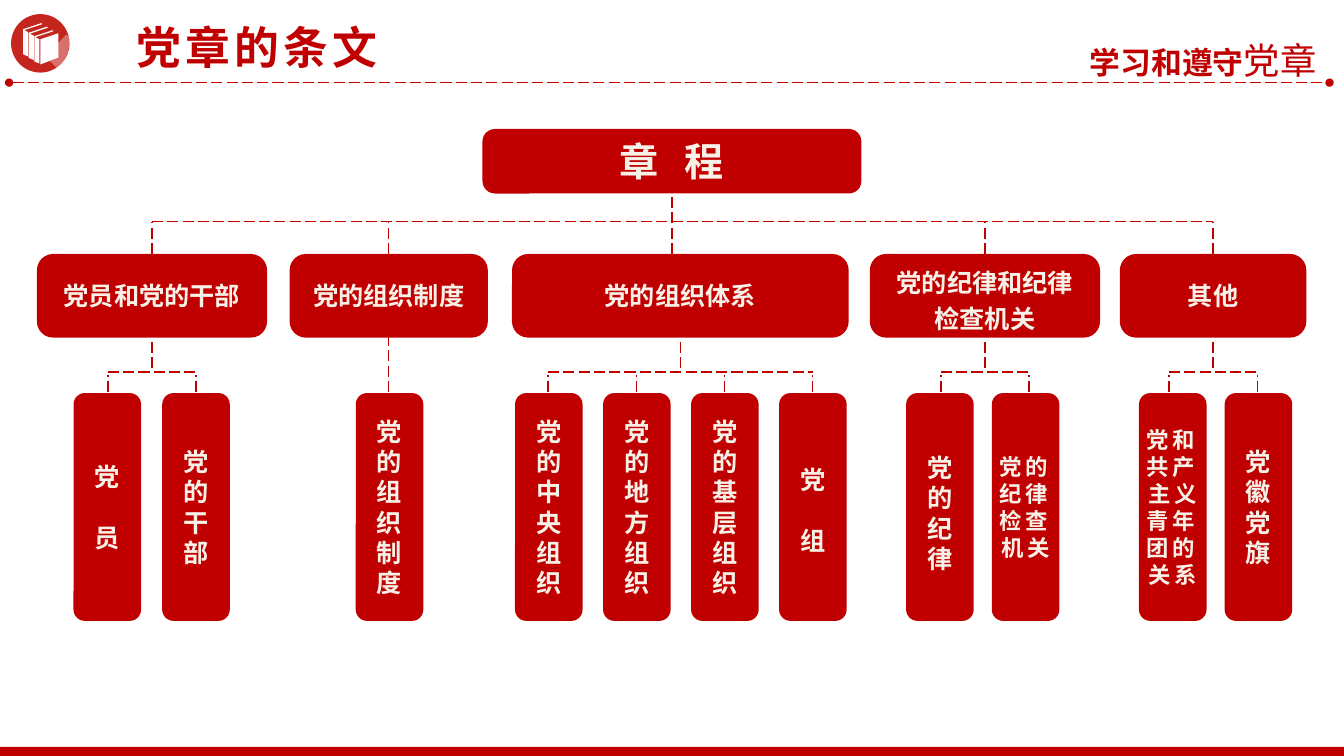
from dataclasses import dataclass

from lxml import etree
from pptx import Presentation
from pptx.dml.color import RGBColor
from pptx.enum.dml import MSO_LINE
from pptx.enum.shapes import MSO_CONNECTOR, MSO_SHAPE
from pptx.enum.text import MSO_ANCHOR, MSO_AUTO_SIZE, PP_ALIGN
from pptx.oxml.ns import qn
from pptx.util import Emu, Pt

COLUMNS, ROWS = 80, 45
CELL = 152400
RED, CREAM, WHITE, ICON_RED = "C00000", "F8F1E7", "FFFFFF", "C4261D"
LATIN, CHINESE = "Times New Roman", "Noto Sans CJK SC"
ROUNDED, OVAL, RECTANGLE = MSO_SHAPE.ROUNDED_RECTANGLE, MSO_SHAPE.OVAL, MSO_SHAPE.RECTANGLE
STRAIGHT, LONG_DASH = MSO_CONNECTOR.STRAIGHT, MSO_LINE.LONG_DASH
LEFT, CENTER, RIGHT = PP_ALIGN.LEFT, PP_ALIGN.CENTER, PP_ALIGN.RIGHT
MIDDLE, NO_AUTOFIT = MSO_ANCHOR.MIDDLE, MSO_AUTO_SIZE.NONE

HEADING_TOP, HEADING_HEIGHT, HEADING_ROUNDING = 15.12, 4.98, 0.194
LEAF_TOP, LEAF_WIDTH, LEAF_HEIGHT = 23.4, 4.02, 13.56
TRUNK_ROW, FORK_ROW, DROP_PITCH = 13.2, 22.14, 5.25
ROOT_CENTER, ROOT_WIDTH = 40, 22.56


@dataclass
class Leaf:
    lines: list[str]
    size: float = 18
    spacing: float = 0
    margin: float = 0.92
    gap: float = 0
    shift: float = 0


@dataclass
class Branch:
    text: str
    left: float
    width: float
    leaf_left: float
    leaf_pitch: float
    leaves: list[Leaf]
    leading: float = 1.2
    shift: float = 0

    @property
    def center(self) -> float:
        return self.left + self.width / 2


BRANCHES = [
    Branch("党员和党的干部", 2.2, 13.7, 4.38, 5.28,
           [Leaf(["党", "员"], gap=21.6), Leaf(["党的干部"])]),
    Branch("党的组织制度", 17.24, 11.8, 21.18, 0, [Leaf(["党的组织制度"])]),
    Branch("党的组织体系", 30.48, 20.04, 30.66, 5.24,
           [Leaf(["党的中央组织"]), Leaf(["党的地方组织"]), Leaf(["党的基层组织"]),
            Leaf(["党", "组"], gap=21.6, shift=0.18)]),
    Branch("党的纪律和纪律检查机关", 51.78, 13.7, 53.94, 5.1,
           [Leaf(["党的纪律"], shift=0.36),
            Leaf(["党的纪律检查机关"], size=16, spacing=3, margin=0.1)],
           leading=1.43, shift=0.09),
    Branch("其他", 66.66, 11.1, 67.8, 5.1,
           [Leaf(["党和共产主义", "青年团的关系"], size=16, spacing=3, margin=0.1),
            Leaf(["党徽党旗"])]),
]


def cells(count: float) -> Emu:
    return Emu(round(count * CELL))


def color(value: str) -> RGBColor:
    return RGBColor.from_string(value)


def add_span(para, text: str, size: float, tint: str = CREAM, bold: bool = True,
             spacing: float = 0, latin: str = LATIN) -> None:
    span = para.add_run()
    span.text = text
    span.font.size, span.font.bold, span.font.name = Pt(size), bold, latin
    span.font.color.rgb = color(tint)
    properties = span.font._element
    if spacing:
        properties.set("spc", str(round(spacing * 100)))
    etree.SubElement(properties, qn("a:ea")).set("typeface", CHINESE)


def prepare(frame, margin: float, shift: float = 0, wrap: bool = True) -> None:
    frame.word_wrap, frame.auto_size, frame.vertical_anchor = wrap, NO_AUTOFIT, MIDDLE
    frame.margin_left = frame.margin_right = cells(margin)
    frame.margin_top, frame.margin_bottom = cells(2 * shift), 0


def write(frame, lines: list[str], size: float, tint: str = CREAM, spacing: float = 0,
          align=CENTER, leading: float = 1.2, gap: float = 0) -> None:
    for index, line in enumerate(lines):
        para = frame.add_paragraph() if index else frame.paragraphs[0]
        para.alignment, para.line_spacing = align, Pt(size * leading)
        para.space_before = Pt(gap if index else 0)
        add_span(para, line, size, tint, spacing=spacing)


def finish(shape, fill: str):
    shape.shadow.inherit = False
    shape.fill.solid()
    shape.fill.fore_color.rgb = color(fill)
    shape.line.fill.background()
    return shape


def add_box(page, kind, left: float, top: float, width: float, height: float,
            fill: str = RED, rounding: float | None = None):
    box = page.shapes.add_shape(kind, cells(left), cells(top), cells(width), cells(height))
    if rounding is not None:
        box.adjustments[0] = rounding
    return finish(box, fill)


def add_outline(page, points: list[tuple[float, float]], fill: str):
    corners = [(cells(x), cells(y)) for x, y in points]
    builder = page.shapes.build_freeform(*corners[0])
    builder.add_line_segments(corners[1:], close=True)
    return finish(builder.convert_to_shape(), fill)


def add_dashes(page, x1: float, y1: float, x2: float, y2: float):
    dashes = page.shapes.add_connector(STRAIGHT, cells(x1), cells(y1), cells(x2), cells(y2))
    dashes.line.color.rgb, dashes.line.width = color(RED), Pt(1)
    dashes.line.dash_style = LONG_DASH
    etree.SubElement(dashes._element.spPr, qn("a:effectLst"))
    return dashes


def draw_icon(page) -> None:
    add_box(page, OVAL, 0.66, 0.84, 3.48, 3.48, ICON_RED)
    book = [(1.38, 1.74), (2.46, 1.38), (2.52, 1.44), (1.44, 1.8),
            (1.68, 1.92), (1.68, 3.36), (1.38, 3.24)]
    for index in range(3):
        add_outline(page, [(x + 0.33 * index, y + 0.21 * index) for x, y in book], WHITE)
    add_outline(page, [(2.4, 2.34), (3.48, 1.98), (3.48, 3.42), (2.4, 3.84)], WHITE)
    glaze = add_outline(page, [(2.7, 3.36), (3.96, 2.04), (4.12, 2.2), (4.14, 2.58),
                               (4.05, 3.1), (3.8, 3.65), (3.4, 4.05)], WHITE)
    tint = glaze._element.spPr.find(qn("a:solidFill"))[0]
    etree.SubElement(tint, qn("a:alpha")).set("val", "35000")


def draw_header(page) -> None:
    rule = add_dashes(page, 0.54, 4.92, 79.14, 4.92)
    outline = rule.line._get_or_add_ln()
    for end in ("a:headEnd", "a:tailEnd"):
        etree.SubElement(outline, qn(end)).set("type", "oval")
    motto = page.shapes.add_textbox(cells(63.6), cells(1.92), cells(15.36), cells(3.24))
    prepare(motto.text_frame, 0.6, wrap=False)
    para = motto.text_frame.paragraphs[0]
    para.alignment, para.line_spacing = RIGHT, Pt(31.2)
    add_span(para, "学习和遵守", 22, RED, latin=CHINESE)
    add_span(para, "党章", 26, RED, bold=False, latin=CHINESE)
    draw_icon(page)
    add_box(page, RECTANGLE, 0, 44.46, COLUMNS, 0.54)
    title = page.shapes.title
    title.left, title.top, title.width, title.height = map(cells, (7.5, 0.84, 15.96, 3.84))
    prepare(title.text_frame, 0.6, wrap=False)
    write(title.text_frame, ["党章的条文"], 32, RED, spacing=3, align=LEFT)


def draw_branch(page, branch: Branch) -> None:
    heading = add_box(page, ROUNDED, branch.left, HEADING_TOP, branch.width, HEADING_HEIGHT,
                      rounding=HEADING_ROUNDING)
    prepare(heading.text_frame, 0.9, branch.shift)
    write(heading.text_frame, [branch.text], 18, leading=branch.leading)
    count = len(branch.leaves)
    if count == 1:
        add_dashes(page, branch.center, 24.24, branch.center, 19.8)
    else:
        reach = DROP_PITCH * (count - 1) / 2
        first = branch.center - reach
        add_dashes(page, branch.center, 21.9, branch.center, 19.8)
        add_dashes(page, first, FORK_ROW, branch.center + reach, FORK_ROW)
        for index in range(count):
            drop = first + index * DROP_PITCH
            add_dashes(page, drop, 24.24, drop, 22.32)
    for index, leaf in enumerate(branch.leaves):
        box = add_box(page, ROUNDED, branch.leaf_left + index * branch.leaf_pitch,
                      LEAF_TOP, LEAF_WIDTH, LEAF_HEIGHT)
        prepare(box.text_frame, leaf.margin, leaf.shift)
        write(box.text_frame, leaf.lines, leaf.size, spacing=leaf.spacing, gap=leaf.gap)


def draw_chart(page) -> None:
    root = add_box(page, ROUNDED, ROOT_CENTER - ROOT_WIDTH / 2, 7.68, ROOT_WIDTH, 3.84,
                   rounding=HEADING_ROUNDING)
    prepare(root.text_frame, 0.6)
    write(root.text_frame, ["章 程"], 28, spacing=6)
    add_dashes(page, ROOT_CENTER, HEADING_TOP, ROOT_CENTER, 11.34)
    add_dashes(page, BRANCHES[0].center, TRUNK_ROW, BRANCHES[-1].center, TRUNK_ROW)
    for index, branch in enumerate(BRANCHES):
        if index != len(BRANCHES) // 2:
            add_dashes(page, branch.center, HEADING_TOP, branch.center, TRUNK_ROW)
        draw_branch(page, branch)


def main() -> None:
    deck = Presentation()
    deck.slide_width, deck.slide_height = cells(COLUMNS), cells(ROWS)
    page = deck.slides.add_slide(deck.slide_layouts[5])
    draw_header(page)
    draw_chart(page)
    deck.save("out.pptx")


if __name__ == "__main__":
    main()
